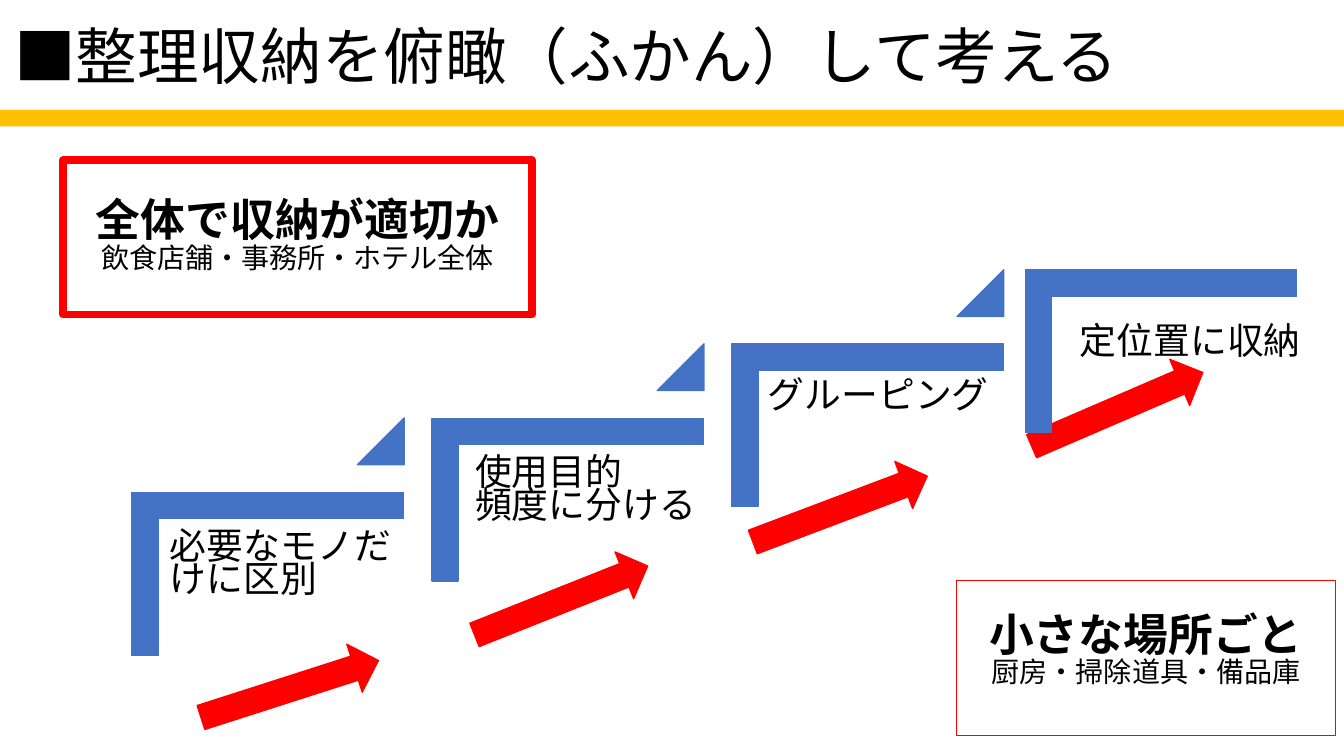
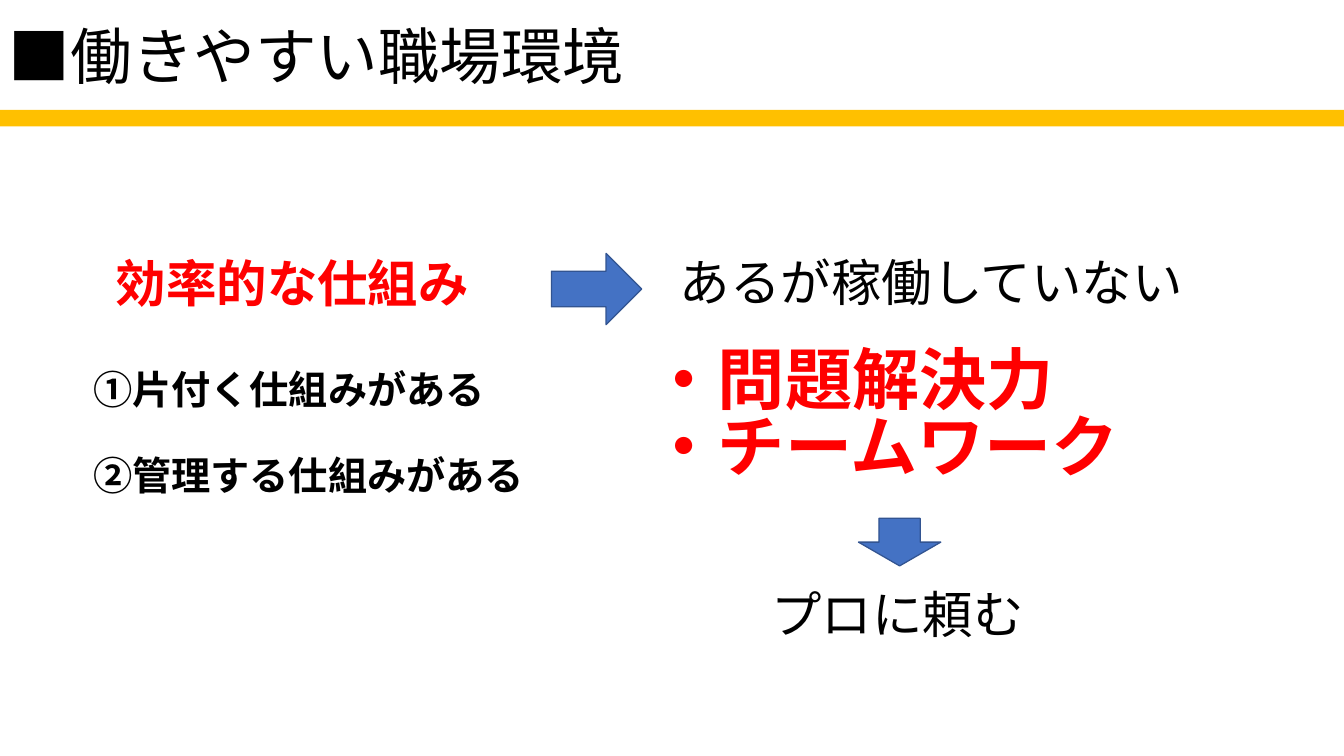
from lxml import etree
from pptx import Presentation
from pptx import util as u
from pptx.dml.color import RGBColor
from pptx.enum import shapes, text
from pptx.oxml.ns import qn

FONT = "Noto Sans CJK JP"
BLACK, RED, BLUE, NAVY, GOLD = "000000", "FF0000", "4472C4", "325491", "FFC000"
PAGE_WIDTH, PAGE_HEIGHT = 37.34, 21
LEFT, CENTER = text.PP_ALIGN.LEFT, text.PP_ALIGN.CENTER
KIND = shapes.MSO_SHAPE
STEP_RISE = 2.06
STEP_SIZE = (4.52, 7.54)
ARROW_SIZE = (5.18, 1.4)

STEPS = [
    (5.18, (5.46, 18.44, 342.2), "必要なモノだけに区別", (4.42, 14.5, 6.81)),
    (13.51, (13, 15.98, 338.3), "使用目的\v頻度に分ける", (12.9, 12.44, 7.59)),
    (21.84, (20.75, 13.44, 339.3), "グルーピング", (21.03, 10.31, 7.77)),
    (30, (28.45, 10.67, 336.7), "定位置に収納", (29.7, 8.81, 7.6)),
]


def rgb(value):
    return RGBColor.from_string(value)


def apply_format(target, values):
    for name, value in values.items():
        setattr(target, name, value)


def add_lines(frame, lines, align=LEFT, spacing=0.84, gap=0):
    for index, (content, size, bold, color) in enumerate(lines):
        para = frame.add_paragraph() if index else frame.paragraphs[0]
        para.text = content
        apply_format(para, {
            "alignment": align,
            "line_spacing": spacing,
            "space_before": u.Pt(gap if index else 0),
        })
        for span in para.runs:
            apply_format(span.font, {"name": FONT, "size": u.Pt(size), "bold": bold})
            span.font.color.rgb = rgb(color)
            latin = span.font._element.find(qn("a:latin"))
            east_asian = etree.Element(qn("a:ea"), typeface=FONT)
            latin.addnext(east_asian)


def add_text(page, place, lines, inset=None, anchor=text.MSO_ANCHOR.TOP, wrap=False, **style):
    box = page.shapes.add_textbox(*map(u.Cm, place))
    frame = box.text_frame
    apply_format(frame, {"word_wrap": wrap, "vertical_anchor": anchor})
    if inset is not None:
        sides = ("left", "top", "right", "bottom")
        apply_format(frame, {f"margin_{side}": u.Cm(inset) for side in sides})
    add_lines(frame, lines, **style)


def add_figure(page, kind, place, fill=None, line=None, width=1, rotation=0, adjust=()):
    figure = page.shapes.add_shape(kind, *map(u.Cm, place))
    apply_format(figure, {"rotation": rotation})
    figure.shadow.inherit = False
    if fill:
        figure.fill.solid()
        figure.fill.fore_color.rgb = rgb(fill)
    else:
        figure.fill.background()
    if line:
        figure.line.color.rgb = rgb(line)
        figure.line.width = u.Pt(width)
    else:
        figure.line.fill.background()
    for index, value in enumerate(adjust):
        figure.adjustments[index] = value
    return figure


def add_callout(page, place, heading, detail, width, bottom=0.13):
    callout = add_figure(page, KIND.RECTANGLE, place, line=RED, width=width)
    apply_format(callout.text_frame, {
        "word_wrap": True,
        "vertical_anchor": text.MSO_ANCHOR.MIDDLE,
        "margin_bottom": u.Cm(bottom),
    })
    lines = [(heading, 35.3, True, BLACK), (detail, 22.1, False, BLACK)]
    add_lines(callout.text_frame, lines, align=CENTER)


def add_page(deck, title, left):
    page = deck.slides.add_slide(deck.slide_layouts[6])
    add_figure(page, KIND.RECTANGLE, (0, 3.05, PAGE_WIDTH, 0.46), fill=GOLD)
    add_text(page, (left, 0.41, 32.2, 2.57), [(title, 48.5, False, BLACK)],
             anchor=text.MSO_ANCHOR.MIDDLE, wrap=True)
    return page


def add_staircase(page):
    for _, (left, top, rotation), _, _ in STEPS:
        add_figure(page, KIND.RIGHT_ARROW, (left, top, *ARROW_SIZE), RED, RED,
                   rotation=rotation)
    for index, (left, _, label, label_place) in enumerate(STEPS):
        top = 12.17 - STEP_RISE * index
        add_figure(page, KIND.CORNER, (left, top, *STEP_SIZE), BLUE, BLUE,
                   rotation=90, adjust=(0.161, 0.161))
        add_text(page, (*label_place, 5.97), [(label, 29, False, BLACK)],
                 inset=0.3, wrap=True, spacing=0.75)
        if index < len(STEPS) - 1:
            add_figure(page, KIND.ISOSCELES_TRIANGLE, (left + 4.75, top - 0.56, 1.3, 1.3),
                       BLUE, BLUE, adjust=(1,))


def build_overview(deck):
    page = add_page(deck, "■整理収納を俯瞰（ふかん）して考える", 0.15)
    add_staircase(page)
    add_callout(page, (1.75, 4.45, 13.03, 4.29), "全体で収納が適切か",
                "飲食店舗・事務所・ホテル全体", 6)
    add_callout(page, (26.57, 16.13, 10.54, 4.29), "小さな場所ごと",
                "厨房・掃除道具・備品庫", 0.75, bottom=0.46)


def build_workplace(deck):
    page = add_page(deck, "■働きやすい職場環境", 0)
    add_text(page, (2.97, 7.16, 10.39, 1.96), [("効率的な仕組み", 39.7, True, RED)])
    add_text(page, (2.34, 10.22, 12.62, 4.22), [
        ("①片付く仕組みがある", 30.9, True, BLACK),
        ("②管理する仕組みがある", 30.9, True, BLACK),
    ], gap=37)
    add_text(page, (18.64, 7.11, 14.5, 1.96), [("あるが稼働していない", 39.7, False, BLACK)])
    add_text(page, (17.83, 9.6, 13.84, 4.78), [
        ("・問題解決力", 52.9, True, RED),
        ("・チームワーク", 52.9, True, RED),
    ], wrap=True)
    add_text(page, (21.18, 16.33, 7.57, 1.96), [("プロに頼む", 39.7, False, BLACK)])
    add_figure(page, KIND.RIGHT_ARROW, (15.32, 7.04, 2.51, 1.98), BLUE, NAVY)
    add_figure(page, KIND.DOWN_ARROW, (23.85, 14.4, 2.29, 1.32), BLUE, NAVY)


def main():
    deck = Presentation()
    apply_format(deck, {"slide_width": u.Cm(PAGE_WIDTH), "slide_height": u.Cm(PAGE_HEIGHT)})
    build_overview(deck)
    build_workplace(deck)
    deck.save("out.pptx")


if __name__ == "__main__":
    main()
